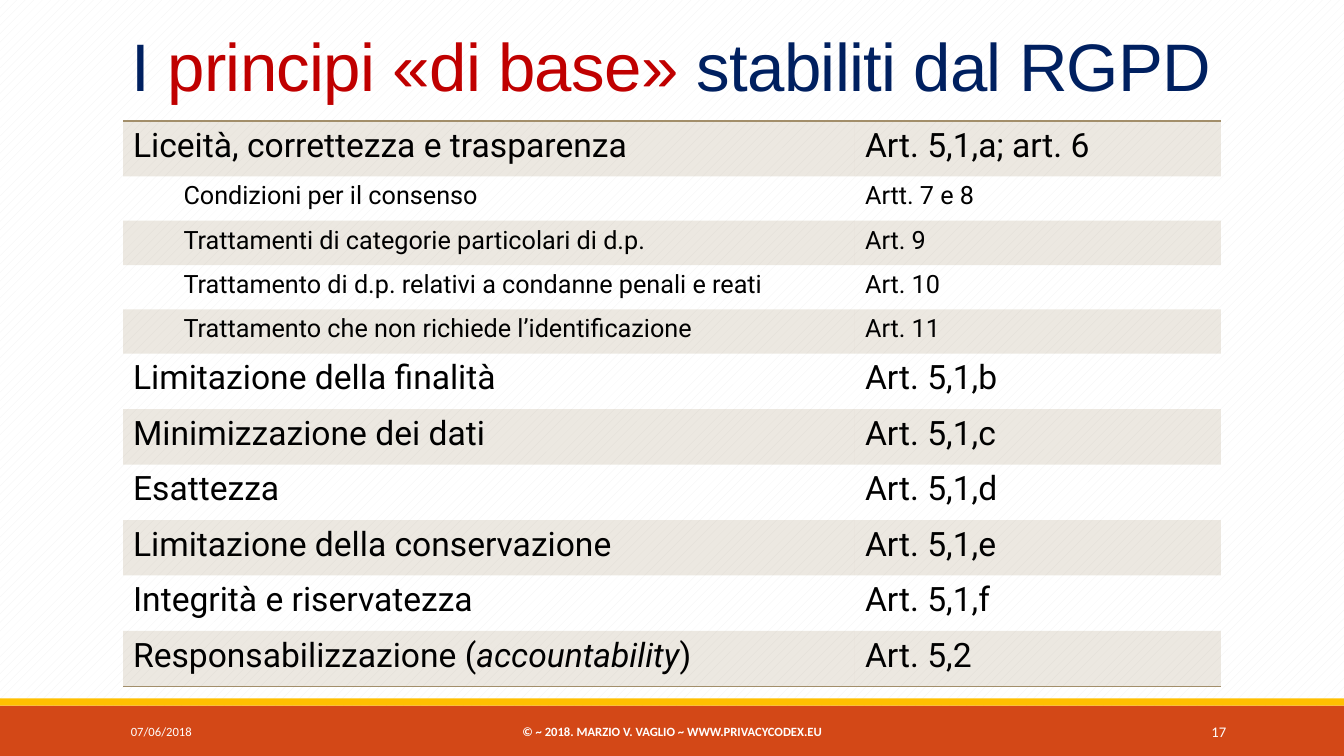
from lxml import etree
from pptx import Presentation
from pptx.dml.color import RGBColor
from pptx.enum.dml import MSO_PATTERN
from pptx.enum.shapes import MSO_SHAPE
from pptx.enum.text import MSO_ANCHOR, MSO_AUTO_SIZE, PP_ALIGN
from pptx.oxml.ns import qn
from pptx.util import Inches, Pt

LEFT, CENTER, RIGHT = PP_ALIGN.LEFT, PP_ALIGN.CENTER, PP_ALIGN.RIGHT
TOP, MIDDLE = MSO_ANCHOR.TOP, MSO_ANCHOR.MIDDLE
RECTANGLE = MSO_SHAPE.RECTANGLE
DASHES = MSO_PATTERN.DASHED_UPWARD_DIAGONAL
NO_AUTOFIT = MSO_AUTO_SIZE.NONE

WIDTH, HEIGHT = 13.33, 7.5
NAVY, RED, SAND, WHITE, BLACK = "002060", "C00000", "A28E6A", "FFFFFF", "000000"
NO_TABLE_STYLE = "{2D5ABB26-0587-4C30-8999-92F81FD0307C}"

# Table content: level, principle as (text, italic) runs, article
PRINCIPLES = [
    (0, [("Liceità, correttezza e trasparenza", False)], "Art. 5,1,a; art. 6"),
    (1, [("Condizioni per il consenso", False)], "Artt. 7 e 8"),
    (1, [("Trattamenti di categorie particolari di d.p.", False)], "Art. 9"),
    (1, [("Trattamento di d.p. relativi a condanne penali e reati", False)], "Art. 10"),
    (1, [("Trattamento che non richiede l’identificazione", False)], "Art. 11"),
    (0, [("Limitazione della finalità", False)], "Art. 5,1,b"),
    (0, [("Minimizzazione dei dati", False)], "Art. 5,1,c"),
    (0, [("Esattezza", False)], "Art. 5,1,d"),
    (0, [("Limitazione della conservazione", False)], "Art. 5,1,e"),
    (0, [("Integrità e riservatezza", False)], "Art. 5,1,f"),
    (0, [("Responsabilizzazione (", False), ("accountability", True), (")", False)],
     "Art. 5,2"),
]
ROW_HEIGHTS = {0: 0.55, 1: 0.44}
TEXT_SIZES = {0: 24, 1: 18}


def color(value):
    return RGBColor.from_string(value)


def add_run(paragraph, text, ink, **formats):
    run = paragraph.add_run()
    run.text = text
    run.font.color.rgb = color(ink)
    for name, value in formats.items():
        setattr(run.font, name, value)
    return run


def paint_background(slide):
    fill = slide.background.fill
    fill.patterned()
    fill.pattern = DASHES
    fill.fore_color.rgb = color("F2F2F2")
    fill.back_color.rgb = color(WHITE)


def place_title(slide, left, top, width, height):
    title = slide.shapes.title
    box = {"left": left, "top": top, "width": width, "height": height}
    for name, value in box.items():
        setattr(title, name, Inches(value))
    frame = title.text_frame
    frame.auto_size, frame.word_wrap, frame.vertical_anchor = NO_AUTOFIT, True, TOP
    paragraph = frame.paragraphs[0]
    paragraph.alignment, paragraph.line_spacing = LEFT, 0.85
    for text, ink in [("I ", NAVY), ("principi «di base»", RED),
                      (" stabiliti dal RGPD", NAVY)]:
        run = add_run(paragraph, text, ink, name="Arial", size=Pt(48))
        run.font._element.set("spc", "-50")


def add_border(cell, side):
    properties = cell._tc.get_or_add_tcPr()
    line = etree.Element(qn(f"a:{side}"), w=str(Pt(1)))
    solid = etree.SubElement(line, qn("a:solidFill"))
    etree.SubElement(solid, qn("a:srgbClr"), val=SAND)
    properties.insert(0, line)


def shade(cell, banded):
    if not banded:
        cell.fill.background()
        return
    cell.fill.solid()
    cell.fill.fore_color.rgb = color(SAND)
    tint = cell._tc.tcPr.find(".//" + qn("a:srgbClr"))
    etree.SubElement(tint, qn("a:alpha"), val="20000")


def place_table(slide, left, top, width):
    heights = [ROW_HEIGHTS[level] for level, _, _ in PRINCIPLES]
    frame = slide.shapes.add_table(len(PRINCIPLES), 2, Inches(left), Inches(top),
                                   Inches(width), Inches(sum(heights)))
    table = frame.table
    table.first_row = False
    table._tbl.tblPr.find(qn("a:tableStyleId")).text = NO_TABLE_STYLE
    for column, share in zip(table.columns, (2 / 3, 1 / 3)):
        column.width = Inches(width * share)

    for index, (level, principle, article) in enumerate(PRINCIPLES):
        table.rows[index].height = Inches(heights[index])
        for column, runs in enumerate((principle, [(article, False)])):
            cell = table.cell(index, column)
            paragraph = cell.text_frame.paragraphs[0]
            if level and column == 0:
                paragraph.level = level
                paragraph._p.get_or_add_pPr().set("marL", str(Inches(0.5)))
            for text, italic in runs:
                add_run(paragraph, text, BLACK, name="Roboto",
                        size=Pt(TEXT_SIZES[level]), italic=italic)
            shade(cell, index % 2 == 0)
            if index == 0:
                add_border(cell, "lnT")
            if index == len(PRINCIPLES) - 1:
                add_border(cell, "lnB")


def place_footer(slide, top, height):
    # Red band with a thin yellow strip above it
    strip = 0.07
    for band_top, band_height, ink in [(top, height, "D34817"),
                                       (top - strip, strip, "FFC000")]:
        band = slide.shapes.add_shape(RECTANGLE, 0, Inches(band_top),
                                      Inches(WIDTH), Inches(band_height))
        band.shadow.inherit = False
        band.fill.solid()
        band.fill.fore_color.rgb = color(ink)
        band.line.fill.background()

    # Date, copyright and slide number
    for left, width, text, alignment, size, bold in [
            (1.2, 2.7, "07/06/2018", LEFT, 9, False),
            (4.03, 5.27, "© ~ 2018. MARZIO V. VAGLIO ~ WWW.PRIVACYCODEX.EU",
             CENTER, 9, True),
            (10.83, 1.43, "17", RIGHT, 10.5, False)]:
        box = slide.shapes.add_textbox(Inches(left), Inches(top + 0.06),
                                       Inches(width), Inches(0.4))
        frame = box.text_frame
        frame.word_wrap, frame.vertical_anchor = True, MIDDLE
        paragraph = frame.paragraphs[0]
        paragraph.alignment = alignment
        add_run(paragraph, text, WHITE, name="Calibri", size=Pt(size), bold=bold)


def main():
    presentation = Presentation()
    presentation.slide_width, presentation.slide_height = Inches(WIDTH), Inches(HEIGHT)
    slide = presentation.slides.add_slide(presentation.slide_layouts[5])
    paint_background(slide)
    place_footer(slide, HEIGHT - 0.5, 0.5)
    place_title(slide, 1.2, 0.31, 11, 1.59)
    place_table(slide, 1.22, 1.2, 10.89)
    presentation.save("out.pptx")


if __name__ == "__main__":
    main()
